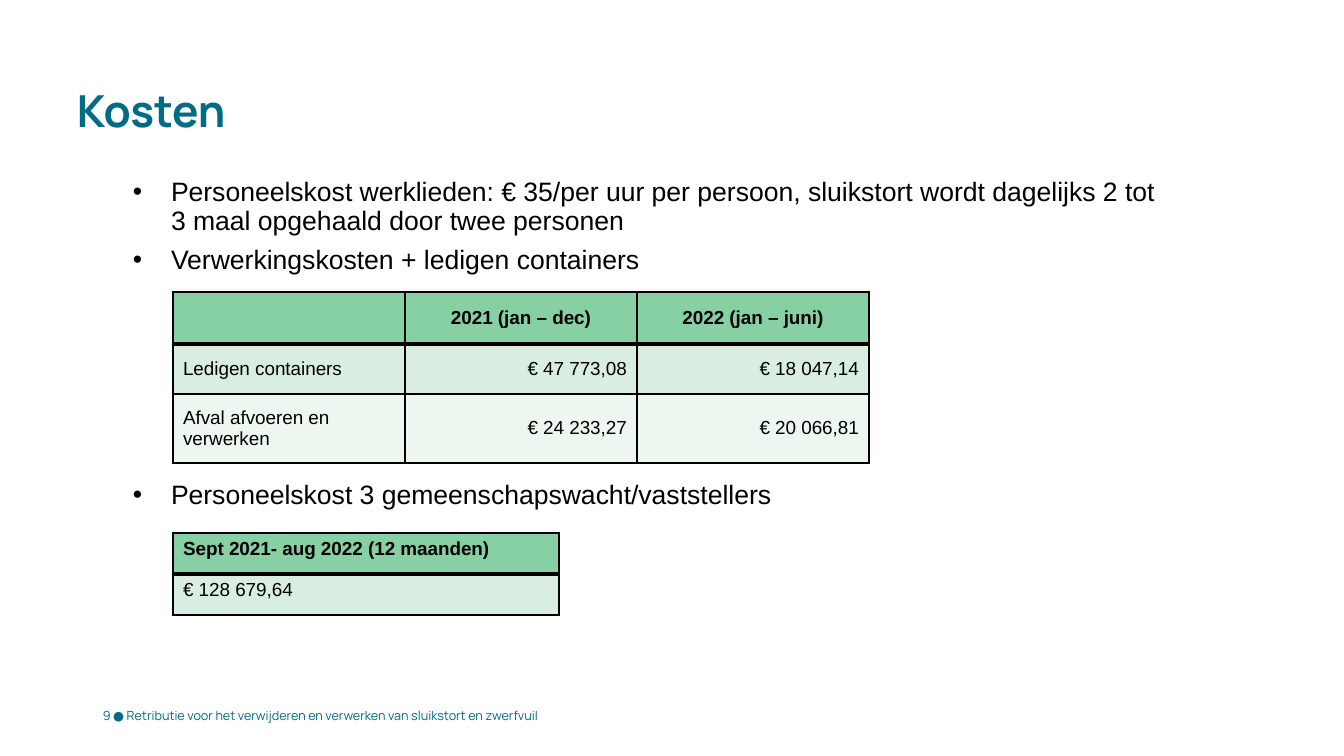
"""Build the cost slide with its bullets and two tables."""
from lxml.etree import SubElement
from pptx import Presentation
from pptx.dml.color import RGBColor
from pptx.enum.text import MSO_ANCHOR, PP_ALIGN
from pptx.oxml import parse_xml
from pptx.oxml.ns import nsdecls, qn
from pptx.util import Pt

COLORS = {"teal": "006B84", "black": "000000", "head": "87D0A4",
          "band": "D9EEE0", "pale": "EDF7F0"}
FILLS = ("head", "band", "pale")
TITLE = "Kosten"
FOOTER = "9 ● Retributie voor het verwijderen en verwerken van sluikstort en zwerfvuil"
BULLETS = [
    ((133, 179, 1037, 100), [
        "Personeelskost werklieden: € 35/per uur per persoon, sluikstort wordt "
        "dagelijks 2 tot 3 maal opgehaald door twee personen",
        "Verwerkingskosten + ledigen containers"]),
    ((133, 482, 1037, 30), ["Personeelskost 3 gemeenschapswacht/vaststellers"]),
]
LEFT, MID, RIGHT = PP_ALIGN.LEFT, PP_ALIGN.CENTER, PP_ALIGN.RIGHT
TABLES = [
    {"at": (173, 292), "wide": 232, "tall": (52, 50, 69),
     "anchor": MSO_ANCHOR.MIDDLE, "head": MID, "body": (LEFT, RIGHT, RIGHT),
     "rows": [("", "2021 (jan – dec)", "2022 (jan – juni)"),
              ("Ledigen containers", "€ 47 773,08", "€ 18 047,14"),
              ("Afval afvoeren en verwerken", "€ 24 233,27", "€ 20 066,81")]},
    {"at": (173, 533), "wide": 386, "tall": (41, 41),
     "anchor": MSO_ANCHOR.TOP, "head": LEFT, "body": (LEFT,),
     "rows": [("Sept 2021- aug 2022 (12 maanden)",), ("€ 128 679,64",)]},
]


def px(size):
    return round(size * 914400 / 100.8)


def style(para, size, color="black", face="Arial", bold=False):
    font = para.font
    font.size, font.name, font.bold = Pt(size), face, bold
    font.color.rgb = RGBColor.from_string(COLORS[color])


def add_box(slide, box, lines, inset=True):
    frame = slide.shapes.add_textbox(*map(px, box)).text_frame
    frame.word_wrap = True
    if not inset:
        frame.margin_left = frame.margin_right = 0
        frame.margin_top = frame.margin_bottom = 0
    frame.text = "\n".join(lines)
    return frame


def add_list(slide, box, lines):
    for i, para in enumerate(add_box(slide, box, lines, False).paragraphs):
        props = para._p.get_or_add_pPr()
        props.set("marL", str(px(38)))
        props.set("indent", str(-px(38)))
        SubElement(props, qn("a:buFont"), typeface="Arial")
        SubElement(props, qn("a:buChar"), char="•")
        para.line_spacing = 0.9
        if i:
            para.space_before = Pt(7.5)
        style(para, 19)


def add_edges(cell, row):
    props = cell._tc.get_or_add_tcPr()
    widths = {"L": 1, "R": 1, "T": 3 if row == 1 else 1, "B": 3 if row == 0 else 1}
    for i, (side, width) in enumerate(widths.items()):
        props.insert(i, parse_xml(
            f'<a:ln{side} {nsdecls("a")} w="{Pt(width)}"><a:solidFill>'
            f'<a:srgbClr val="{COLORS["black"]}"/></a:solidFill></a:ln{side}>'))


def add_grid(slide, data):
    rows, tall, wide = data["rows"], data["tall"], data["wide"]
    count = len(rows[0])
    size = (*data["at"], wide * count, sum(tall))
    table = slide.shapes.add_table(len(rows), count, *map(px, size)).table
    for col in table.columns:
        col.width = px(wide)
    for r, texts in enumerate(rows):
        table.rows[r].height = px(tall[r])
        for c, text in enumerate(texts):
            cell = table.cell(r, c)
            cell.text = text
            cell.vertical_anchor = data["anchor"]
            cell.fill.solid()
            cell.fill.fore_color.rgb = RGBColor.from_string(COLORS[FILLS[r]])
            add_edges(cell, r)
            para = cell.text_frame.paragraphs[0]
            para.alignment = data["body"][c] if r else data["head"]
            style(para, 13.5, bold=r == 0)


def main():
    deck = Presentation()
    deck.slide_width, deck.slide_height = px(1344), px(756)
    slide = deck.slides.add_slide(deck.slide_layouts[6])
    foot = add_box(slide, (93, 695, 545, 40), [FOOTER])
    foot.vertical_anchor = MSO_ANCHOR.MIDDLE
    style(foot.paragraphs[0], 9, "teal", "Manrope")
    head = add_box(slide, (77, 89, 1175, 53), [TITLE], False).paragraphs[0]
    head.line_spacing = 0.9
    style(head, 31.5, "teal", "Manrope", True)
    for box, lines in BULLETS:
        add_list(slide, box, lines)
    for data in TABLES:
        add_grid(slide, data)
    deck.save("out.pptx")


if __name__ == "__main__":
    main()
